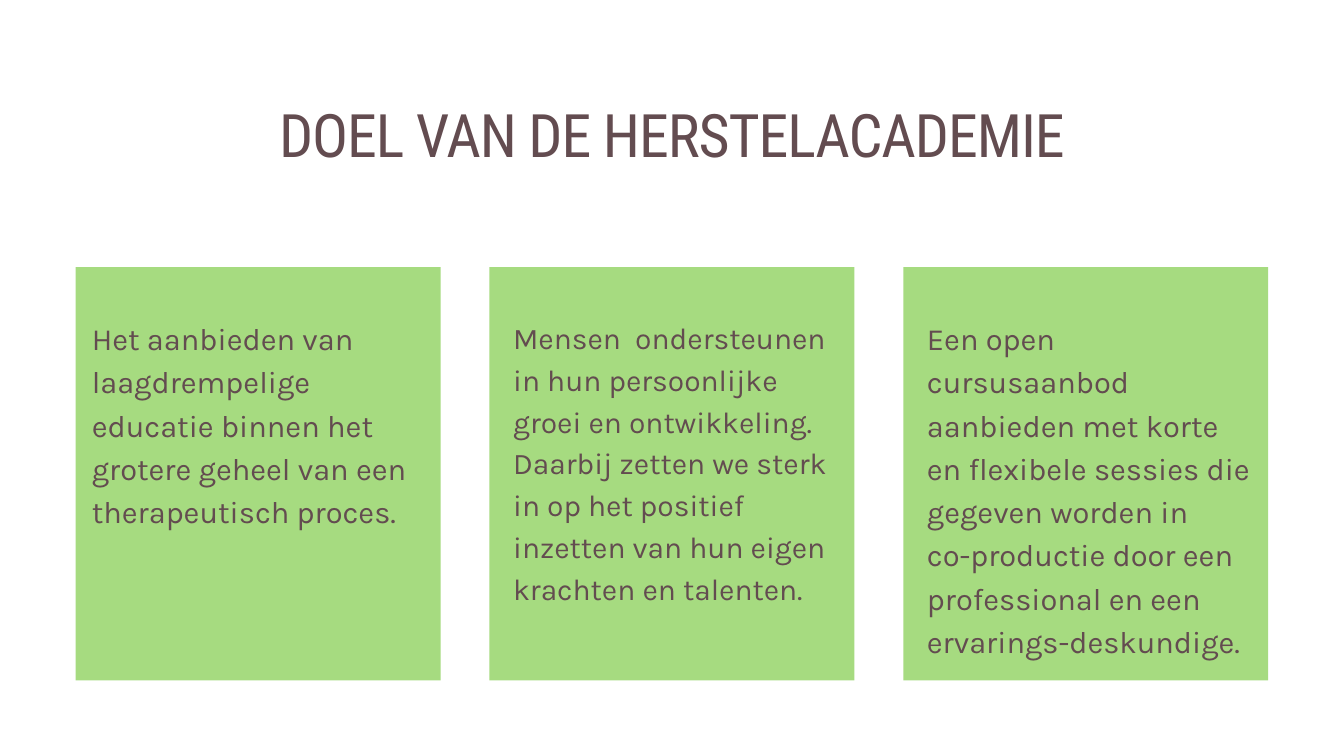
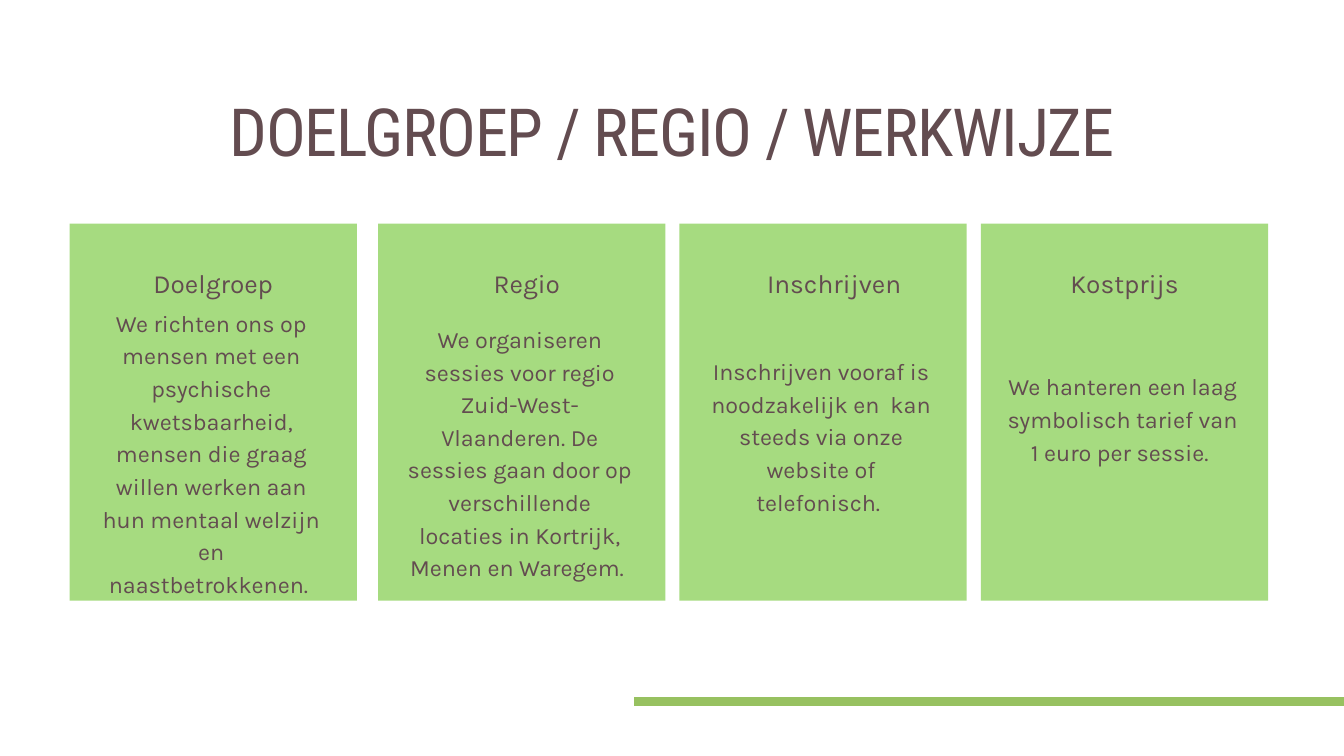
from lxml.etree import SubElement
from pptx import Presentation
from pptx.dml.color import RGBColor as Rgb
from pptx.enum.shapes import MSO_CONNECTOR as Link, MSO_SHAPE as Form
from pptx.enum.text import MSO_AUTO_SIZE as Fit, PP_ALIGN as Align
from pptx.oxml.ns import qn
from pptx.util import Inches, Pt

WIDE, HIGH = Inches(13.33), Inches(7.5)
HUES = {"ink": "634C50", "card": "A6DB80", "rule": "97C160"}
FRAME = {"margin_left": 0, "margin_top": 0, "margin_right": 0, "margin_bottom": 0,
         "word_wrap": True, "auto_size": Fit.SHAPE_TO_FIT_TEXT}
HEAD, BODY = "Roboto Condensed", "Karla"

GOALS = [
    (1.2, 24.38, 28.93, 22, 30.9,
     ["Het aanbieden van laagdrempelige educatie binnen het grotere geheel van een "
      "therapeutisch proces."]),
    (1.76, 23.63, 39.33, 21.4, 29.9,
     ["Mensen  ondersteunen in hun persoonlijke groei en ontwikkeling.",
      "Daarbij zetten we sterk in op het positief inzetten van hun eigen krachten en "
      "talenten."]),
    (1.76, 24.38, 46.4, 22, 30.9,
     ["Een open cursusaanbod aanbieden met korte en flexibele sessies die gegeven worden in",
      "co-productie door een professional en een ervarings-deskundige."]),
]
FACTS = [
    (5.18, 2.1, 17.18, "Doelgroep", 2.1, 40.27, 16.88, 34.4,
     "We richten ons op mensen met een psychische kwetsbaarheid, mensen die graag "
     "willen werken aan hun mentaal welzijn en naastbetrokkenen. "),
    (28.13, 2.48, 17.18, "Regio", 2.1, 42.4, 16.88, 34.4,
     "We organiseren sessies voor regio Zuid-West-Vlaanderen. De sessies gaan door op "
     "verschillende locaties in Kortrijk, Menen en Waregem. "),
    (50.55, 2.93, 17.18, "Inschrijven", 2.1, 46.67, 16.88, 25.87,
     "Inschrijven vooraf is noodzakelijk en  kan steeds via onze website of telefonisch. "),
    (72.98, 1.73, 17.93, "Kostprijs", 1.73, 48.67, 17.63, 17.2,
     "We hanteren een laag symbolisch tarief van 1 euro per sessie. "),
]


def hue(name):
    """Return a named colour."""
    return Rgb.from_string(HUES[name])


def span(left, top, width, height):
    """Turn percentages of the slide into lengths."""
    return [round(part * size / 100)
            for part, size in zip((left, top, width, height), (WIDE, HIGH) * 2)]


def style(item, looks):
    """Set each format value on an object."""
    for name, value in looks.items():
        setattr(item, name, value)


def text(slide, area, lines, size, lead, face=BODY, align=Align.CENTER, track=0):
    """Add a text box with one paragraph per line."""
    frame = slide.shapes.add_textbox(*span(*area)).text_frame
    style(frame, FRAME)
    for num, line in enumerate(lines):
        para = frame.add_paragraph() if num else frame.paragraphs[0]
        style(para, {"alignment": align, "line_spacing": Pt(lead)})
        run = para.add_run()
        run.text = line
        style(run.font, {"name": face, "size": Pt(size)})
        run.font.color.rgb = hue("ink")
        if track:
            run.font._element.set("spc", str(track))


def title(slide, area, words, size, lead, track):
    """Add the slide title."""
    text(slide, area, [words], size, lead, face=HEAD, track=track)


def card(slide, area):
    """Add a plain green card."""
    box = slide.shapes.add_shape(Form.RECTANGLE, *span(*area))
    box.shadow.inherit = False
    box.fill.solid()
    box.fill.fore_color.rgb = hue("card")
    box.line.fill.background()


def rule(slide, left, top):
    """Draw a thick line to the right edge."""
    line = slide.shapes.add_connector(Link.STRAIGHT, *span(left, top, 100, top))
    line.line.color.rgb = hue("rule")
    line.line.width = Pt(6)
    SubElement(line._element.spPr, qn("a:effectLst"))


def goals(slide):
    """Build the slide with three goals."""
    title(slide, (5.63, 12.13, 88.73, 10.53), "DOEL VAN DE HERSTELACADEMIE", 42.8, 55.6, -80)
    for num, (inset, width, height, size, lead, lines) in enumerate(GOALS):
        left = 5.63 + num * 30.79
        card(slide, (left, 35.33, 27.15, 54.67))
        text(slide, (left + inset, 41.47, width, height), lines, size, lead, align=Align.LEFT)


def facts(slide):
    """Build the slide with four headed cards."""
    title(slide, (15.83, 12.8, 68.33, 19.47), "DOELGROEP / REGIO / WERKWIJZE", 47.4, 52.1, -90)
    for left, shift, broad, label, inset, top, width, height, words in FACTS:
        card(slide, (left, 29.6, 21.38, 49.87))
        text(slide, (left + shift, 35.33, broad, 4.13), [label], 18.7, 22.4)
        text(slide, (left + inset, top, width, height), [words], 16.7, 23.3)
    rule(slide, 47.18, 92.8)


def main():
    """Build and save the deck."""
    deck = Presentation()
    style(deck, {"slide_width": WIDE, "slide_height": HIGH})
    for build in (goals, facts):
        build(deck.slides.add_slide(deck.slide_layouts[6]))
    deck.save("out.pptx")


if __name__ == "__main__":
    main()
